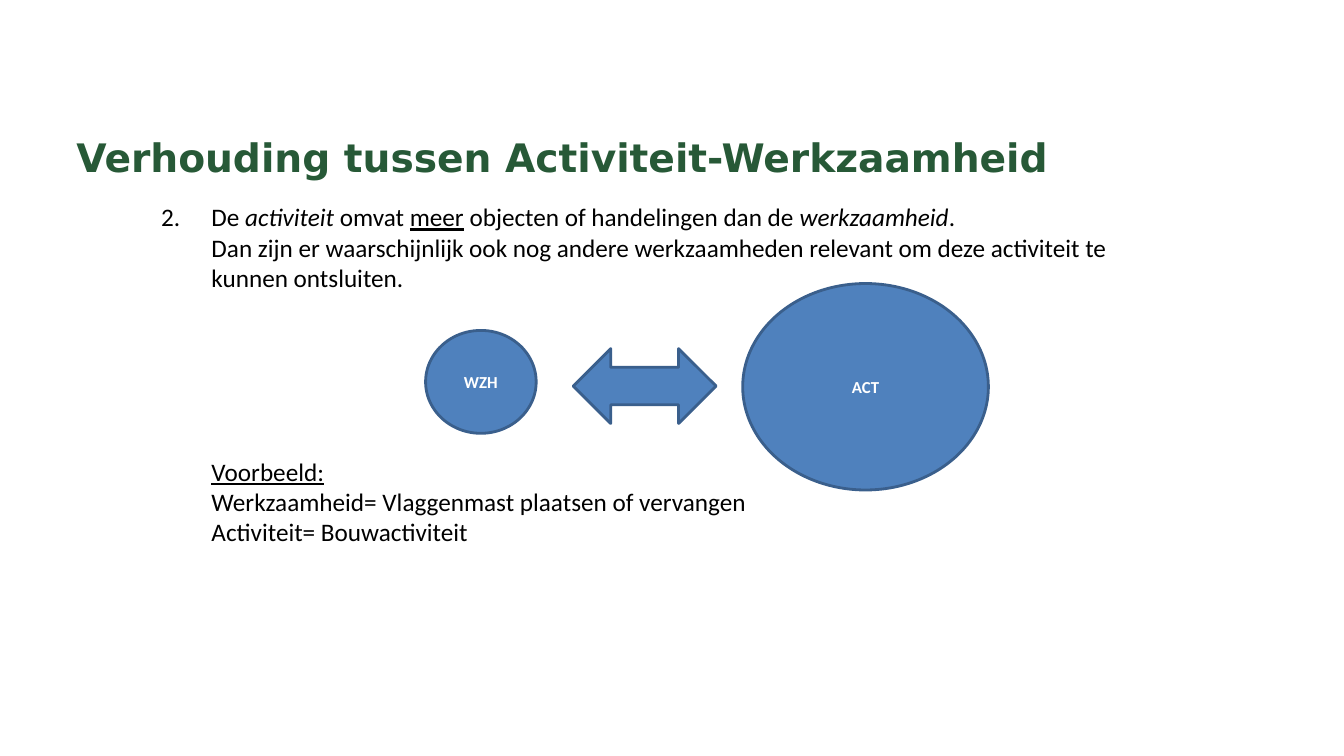
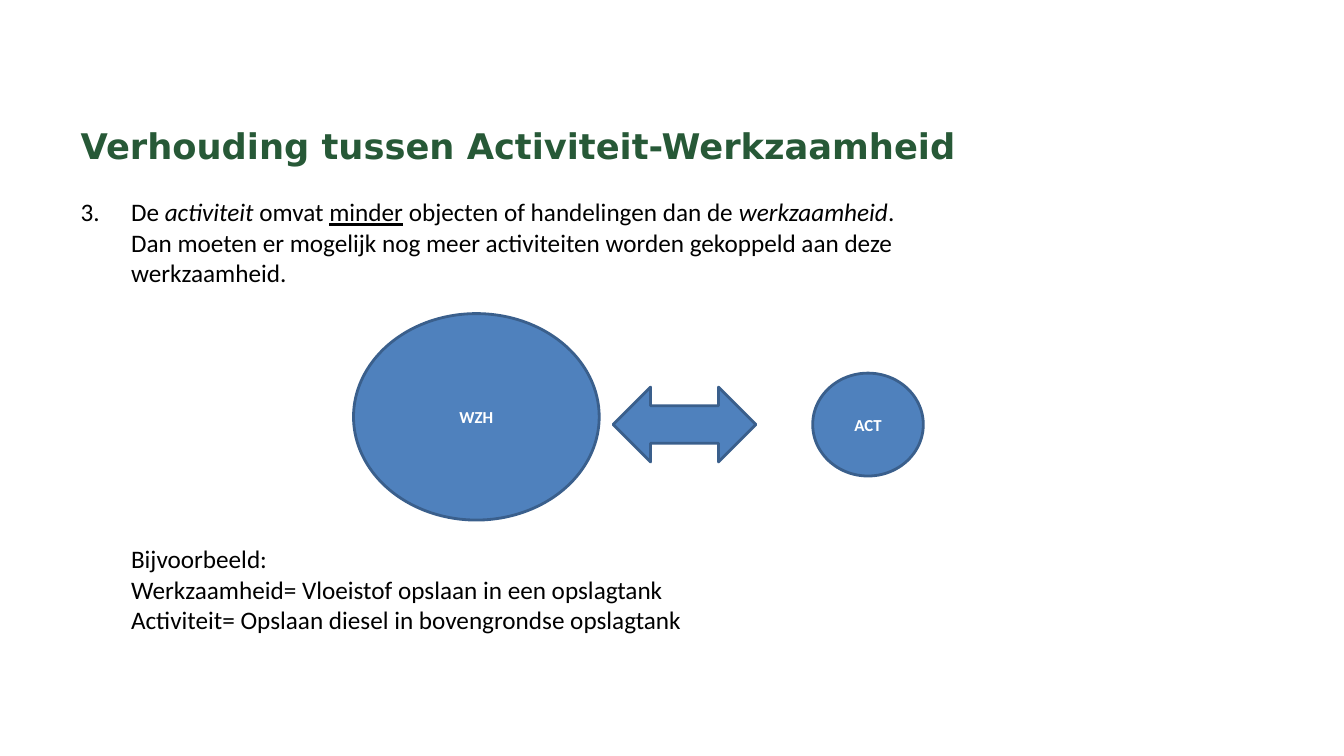
from lxml import etree
from pptx import Presentation
from pptx.dml.color import RGBColor
from pptx.enum.shapes import MSO_SHAPE
from pptx.enum.text import MSO_ANCHOR, PP_ALIGN
from pptx.oxml.ns import qn
from pptx.util import Pt

OVAL = MSO_SHAPE.OVAL
DOUBLE_ARROW = MSO_SHAPE.LEFT_RIGHT_ARROW
MIDDLE = MSO_ANCHOR.MIDDLE
CENTER = PP_ALIGN.CENTER

COLORS = {
    "title": "275937",
    "body": "000000",
    "fill": "4F81BD",
    "outline": "3A5F8C",
    "label": "FFFFFF",
}
TITLE_FONT, BODY_FONT = "DejaVu Sans", "Calibri"
TITLE = "Verhouding tussen Activiteit-Werkzaamheid"
SMALL, LARGE, ARROW = (79, 73.5), (175.5, 147.5), (102, 53.5)
INDENT = 36


class Deck:
    """Holds the shared style and the current slide."""

    def __init__(self):
        self.prs = Presentation()
        self.prs.slide_width, self.prs.slide_height = Pt(960), Pt(540)
        self.slide = None

    def new_slide(self):
        self.slide = self.prs.slides.add_slide(self.prs.slide_layouts[6])

    def color(self, name):
        return RGBColor.from_string(COLORS[name])

    def run(self, paragraph, text, size, font=BODY_FONT, color="body",
            bold=None, italic=None, underline=None):
        run = paragraph.add_run()
        run.text = text
        run.font.name, run.font.size = font, Pt(size)
        run.font.color.rgb = self.color(color)
        run.font.bold, run.font.italic = bold, italic
        run.font.underline = underline

    def frame(self, box):
        frame = self.slide.shapes.add_textbox(*map(Pt, box)).text_frame
        frame.word_wrap = True
        return frame

    def title(self, box, size):
        self.run(self.frame(box).paragraphs[0], TITLE, size,
                 TITLE_FONT, "title", bold=True)

    def indent(self, paragraph, number=None):
        props = paragraph._p.get_or_add_pPr()
        props.set("marL", str(Pt(INDENT)))
        props.set("indent", str(-Pt(INDENT) if number else 0))
        if number:
            etree.SubElement(props, qn("a:buFont"), typeface="+mj-lt")
            etree.SubElement(props, qn("a:buAutoNum"),
                             type="arabicPeriod", startAt=str(number))

    def body(self, box, number, amount, consequence, example, gap):
        frame = self.frame(box)
        rule = frame.paragraphs[0]
        self.indent(rule, number)
        for text, style in (
            ("De ", {}),
            ("activiteit", {"italic": True}),
            (" omvat ", {}),
            (amount, {"underline": True}),
            (" objecten of handelingen dan de ", {}),
            ("werkzaamheid", {"italic": True}),
            (".", {}),
        ):
            self.run(rule, text, 18, **style)
        heading, underline, *cases = example
        for text in (consequence, heading, *cases):
            line = frame.add_paragraph()
            self.indent(line)
            if text == heading:
                line.space_before = Pt(gap)
            self.run(line, text, 18,
                     underline=underline if text == heading else None)

    def shape(self, kind, position, size, label=None):
        shape = self.slide.shapes.add_shape(kind, *map(Pt, position + size))
        shape.shadow.inherit = False
        shape.fill.solid()
        shape.fill.fore_color.rgb = self.color("fill")
        shape.line.color.rgb = self.color("outline")
        shape.line.width = Pt(2)
        if label:
            shape.text_frame.vertical_anchor = MIDDLE
            paragraph = shape.text_frame.paragraphs[0]
            paragraph.alignment = CENTER
            self.run(paragraph, label, 12, color="label", bold=True)

    def comparison(self, activity, arrow, work):
        self.shape(OVAL, *work, "WZH")
        self.shape(OVAL, *activity, "ACT")
        self.shape(DOUBLE_ARROW, arrow, ARROW)


def main():
    deck = Deck()

    deck.new_slide()
    deck.title((47.5, 92, 864, 52.5), 28)
    deck.comparison(work=((304, 236), SMALL), arrow=(409.5, 249),
                    activity=((530.5, 202.5), LARGE))
    deck.body(
        (108, 140.5, 690, 257), 2, "meer",
        "Dan zijn er waarschijnlijk ook nog andere werkzaamheden relevant "
        "om deze activiteit te kunnen ontsluiten.",
        ("Voorbeeld:", True,
         "Werkzaamheid= Vlaggenmast plaatsen of vervangen",
         "Activiteit= Bouwactiviteit"),
        gap=117)

    deck.new_slide()
    deck.title((50.5, 85.5, 646, 44.5), 25.2)
    deck.comparison(work=((252.5, 224), LARGE), arrow=(438, 276.5),
                    activity=((580.5, 266.5), SMALL))
    deck.body(
        (50.5, 137, 646, 322.5), 3, "minder",
        "Dan moeten er mogelijk nog meer activiteiten worden gekoppeld "
        "aan deze werkzaamheid.",
        ("Bijvoorbeeld:", None,
         "Werkzaamheid= Vloeistof opslaan in een opslagtank",
         "Activiteit= Opslaan diesel in bovengrondse opslagtank"),
        gap=183)

    deck.prs.save("out.pptx")


if __name__ == "__main__":
    main()
